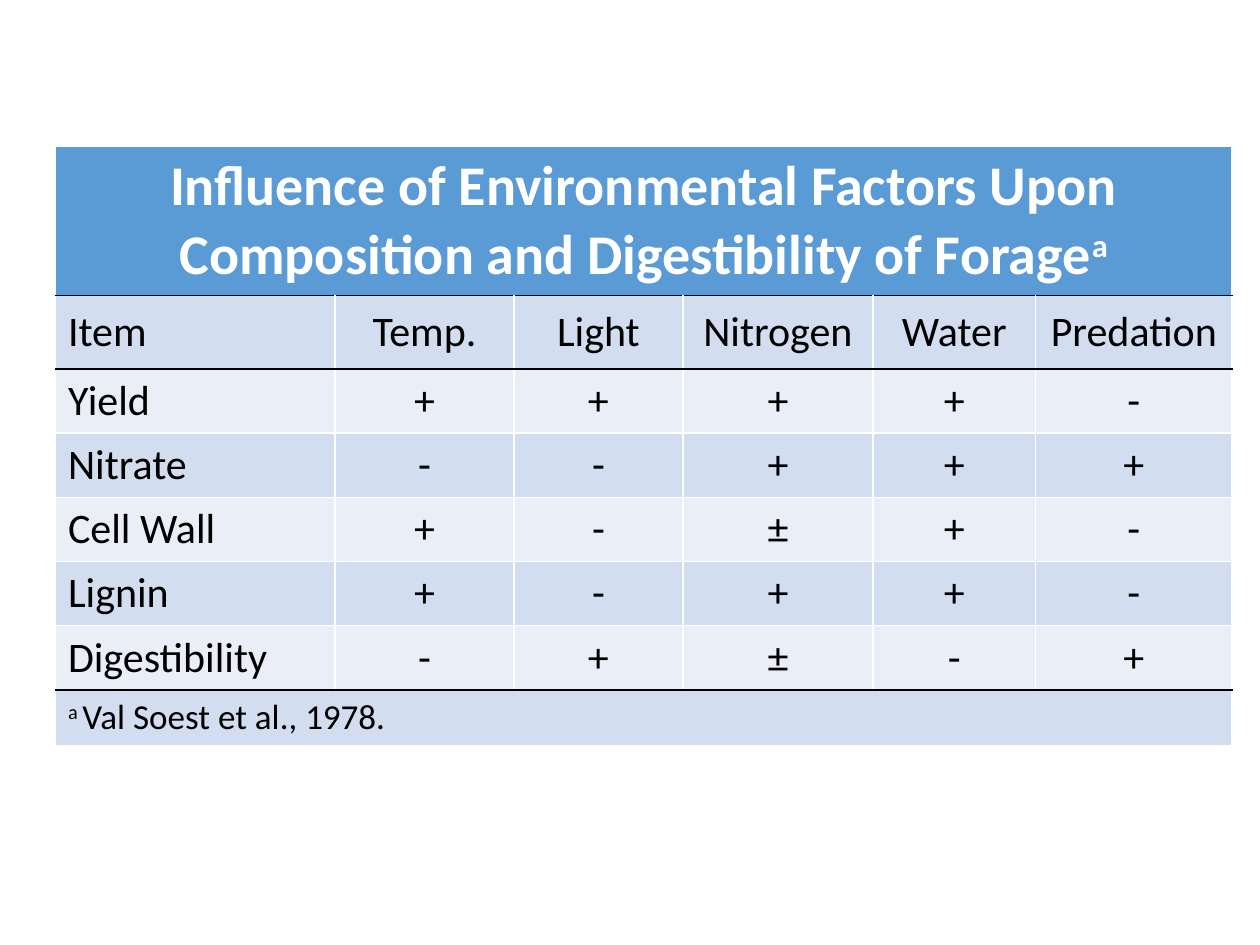
import lxml.etree
import pptx
import pptx.dml.color
import pptx.enum.text
import pptx.oxml.ns
import pptx.util

Inches = pptx.util.Inches
PP_ALIGN = pptx.enum.text.PP_ALIGN
MSO_ANCHOR = pptx.enum.text.MSO_ANCHOR

WHITE, BLACK = "FFFFFF", "000000"
TITLE_FILL, BANDS = "5B9BD5", ("D2DEEF", "EAEFF7")

TITLE = [("Influence of Environmental Factors Upon Composition "
          "and Digestibility of Forage", False), ("a", True)]
FOOTNOTE = [("a ", True), ("Val Soest et al., 1978.", False)]
FACTORS = [
    ["Item", "Temp.", "Light", "Nitrogen", "Water", "Predation"],
    ["Yield", "+", "+", "+", "+", "-"],
    ["Nitrate", "-", "-", "+", "+", "+"],
    ["Cell Wall", "+", "-", "±", "+", "-"],
    ["Lignin", "+", "-", "+", "+", "-"],
    ["Digestibility", "-", "+", "±", "-", "+"],
]
COLUMN_WIDTHS = [2.22, 1.42, 1.34, 1.51, 1.29, 1.56]
ROW_HEIGHTS = [1.18, 0.58] + [0.51] * 5 + [0.43]
FOOTNOTE_ROW = len(ROW_HEIGHTS) - 1
# Numbers of the rows that have a black rule above them
RULED_ROWS = {1, 2, FOOTNOTE_ROW}


def rgb(color):
    return pptx.dml.color.RGBColor.from_string(color)


def set_borders(cell, top, bottom):
    """Draw 1 pt borders, white at the sides; they must precede the cell fill."""
    properties = cell._tc.get_or_add_tcPr()
    sides = (("lnL", WHITE), ("lnR", WHITE), ("lnT", top), ("lnB", bottom))
    for position, (side, color) in enumerate(sides):
        line = lxml.etree.Element(pptx.oxml.ns.qn(f"a:{side}"), w=str(pptx.util.Pt(1)))
        solid = lxml.etree.SubElement(line, pptx.oxml.ns.qn("a:solidFill"))
        lxml.etree.SubElement(solid, pptx.oxml.ns.qn("a:srgbClr"), val=color)
        properties.insert(position, line)


def style_cell(cell, row, fill):
    cell.fill.solid()
    cell.fill.fore_color.rgb = rgb(fill)
    set_borders(cell,
                top=BLACK if row in RULED_ROWS else WHITE,
                bottom=BLACK if row + 1 in RULED_ROWS else WHITE)


def write_cell(cell, parts, size, color=BLACK, bold=False,
               align=PP_ALIGN.LEFT, anchor=MSO_ANCHOR.MIDDLE):
    """Write parts, pairs of text and whether it is superscript."""
    cell.vertical_anchor = anchor
    paragraph = cell.text_frame.paragraphs[0]
    paragraph.alignment = align
    for text, superscript in parts:
        run = paragraph.add_run()
        run.text = text
        run.font.name = "Calibri"
        run.font.size = pptx.util.Pt(size)
        run.font.bold = bold
        run.font.color.rgb = rgb(color)
        if superscript:
            run.font._element.set("baseline", "30000")


def add_factor_table(slide, left, top, width, height):
    table = slide.shapes.add_table(
        len(ROW_HEIGHTS), len(COLUMN_WIDTHS),
        Inches(left), Inches(top), Inches(width), Inches(height)).table
    for column, share in zip(table.columns, COLUMN_WIDTHS):
        column.width = Inches(width * share / sum(COLUMN_WIDTHS))
    for row, share in zip(table.rows, ROW_HEIGHTS):
        row.height = Inches(height * share / sum(ROW_HEIGHTS))

    for row in range(len(ROW_HEIGHTS)):
        fill = TITLE_FILL if row == 0 else BANDS[(row - 1) % 2]
        for column in range(len(COLUMN_WIDTHS)):
            style_cell(table.cell(row, column), row, fill)
    for row in (0, FOOTNOTE_ROW):
        table.cell(row, 0).merge(table.cell(row, len(COLUMN_WIDTHS) - 1))

    write_cell(table.cell(0, 0), TITLE, 32, WHITE, bold=True,
               align=PP_ALIGN.CENTER, anchor=MSO_ANCHOR.TOP)
    for row, entries in enumerate(FACTORS, start=1):
        for column, entry in enumerate(entries):
            write_cell(table.cell(row, column), [(entry, False)], 24,
                       align=PP_ALIGN.CENTER if column else PP_ALIGN.LEFT)
    write_cell(table.cell(FOOTNOTE_ROW, 0), FOOTNOTE, 20)


def main():
    presentation = pptx.Presentation()
    presentation.slide_width = Inches(10)
    presentation.slide_height = Inches(7.5)
    slide = presentation.slides.add_slide(presentation.slide_layouts[6])
    add_factor_table(slide, 0.44, 1.16, sum(COLUMN_WIDTHS), sum(ROW_HEIGHTS))
    presentation.save("out.pptx")


if __name__ == "__main__":
    main()
